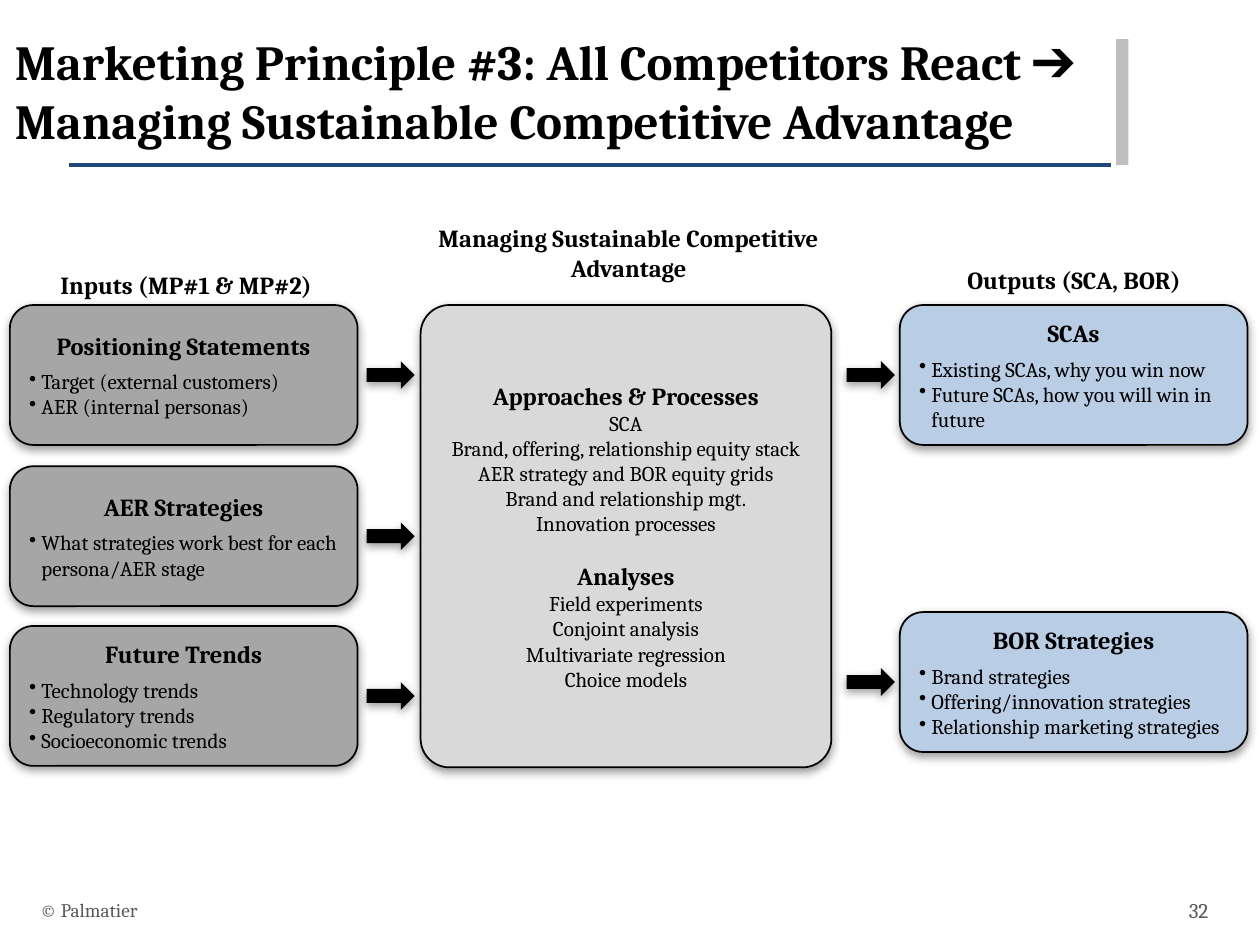
from dataclasses import dataclass
from typing import NamedTuple

from lxml.etree import SubElement
from pptx import Presentation
from pptx.dml.color import RGBColor
from pptx.enum.shapes import MSO_CONNECTOR, MSO_SHAPE
from pptx.enum.text import MSO_ANCHOR, PP_ALIGN
from pptx.oxml.ns import qn
from pptx.util import Cm, Pt


@dataclass(frozen=True)
class Theme:
    font: str = "Cambria"
    ink: str = "000000"
    muted: str = "595959"
    rule: str = "1F497D"
    bar: str = "BFBFBF"
    input_fill: str = "A6A6A6"
    process_fill: str = "D9D9D9"
    output_fill: str = "B9CDE5"
    shadow: str = "808080"
    title: float = 28
    heading: float = 14
    body: float = 12
    footer: float = 11


class Area(NamedTuple):
    """Left, top, width and height in centimetres."""
    left: float
    top: float
    width: float
    height: float

    def lengths(self):
        return [Cm(value) for value in self]


@dataclass(frozen=True)
class Card:
    title: str
    bullets: tuple[str, ...]
    left: float
    top: float
    fill: str
    arrow_left: float


@dataclass(frozen=True)
class Section:
    title: str
    lines: tuple[str, ...]
    space_before: float = 0


THEME = Theme()
CARD_WIDTH, CARD_HEIGHT = 7.01, 2.82
ARROW_WIDTH, ARROW_HEIGHT = 0.97, 0.56
ROW_TOP = 6.15
INPUT = dict(left=0.2, fill=THEME.input_fill, arrow_left=7.39)
OUTPUT = dict(left=18.14, fill=THEME.output_fill, arrow_left=17.07)

CARDS = (
    Card("Positioning Statements",
         ("Target (external customers)", "AER (internal personas)"),
         top=ROW_TOP, **INPUT),
    Card("AER Strategies",
         ("What strategies work best for each persona/AER stage",),
         top=9.4, **INPUT),
    Card("Future Trends",
         ("Technology trends", "Regulatory trends", "Socioeconomic trends"),
         top=12.62, **INPUT),
    Card("SCAs",
         ("Existing SCAs, why you win now",
          "Future SCAs, how you will win in future"),
         top=ROW_TOP, **OUTPUT),
    Card("BOR Strategies",
         ("Brand strategies", "Offering/innovation strategies",
          "Relationship marketing strategies"),
         top=12.34, **OUTPUT),
)
SECTIONS = (
    Section("Approaches & Processes",
            ("SCA", "Brand, offering, relationship equity stack",
             "AER strategy and BOR equity grids",
             "Brand and relationship mgt.", "Innovation processes")),
    Section("Analyses",
            ("Field experiments", "Conjoint analysis",
             "Multivariate regression", "Choice models"),
            space_before=14.4),
)
HEADINGS = (
    ("Managing Sustainable Competitive Advantage", Area(8.13, 4.37, 9.09, 1.45)),
    ("Inputs (MP#1 & MP#2)", Area(0.3, 5.31, 6.91, 0.86)),
    ("Outputs (SCA, BOR)", Area(18.16, 5.21, 6.99, 0.86)),
)


def add_para(frame, text: str, *, size: float = THEME.body, bold: bool = False,
             color: str = THEME.ink, align=PP_ALIGN.LEFT, before: float = 0,
             after: float = 0, bullet: bool = False):
    """Write into the empty first paragraph, or append a new one."""
    first = frame.paragraphs[0]
    para = first if not first.runs else frame.add_paragraph()
    para.alignment = align
    para.space_before, para.space_after = Pt(before), Pt(after)
    if bullet:
        properties = para._p.get_or_add_pPr()
        properties.set("marL", str(Cm(0.25)))
        properties.set("indent", str(-Cm(0.25)))
        SubElement(properties, qn("a:buChar")).set("char", "•")
    span = para.add_run()
    span.text = text
    span.font.name, span.font.size, span.font.bold = THEME.font, Pt(size), bold
    span.font.color.rgb = RGBColor.from_string(color)


def set_frame(frame, anchor):
    frame.word_wrap = True
    frame.vertical_anchor = anchor
    frame.margin_left = frame.margin_right = Cm(0.25)
    frame.margin_top = frame.margin_bottom = Cm(0.13)


def add_text(page, text: str, area: Area, *, anchor=MSO_ANCHOR.TOP, **style):
    box = page.shapes.add_textbox(*area.lengths())
    set_frame(box.text_frame, anchor)
    add_para(box.text_frame, text, **style)


def add_soft_shadow(shape):
    effects = shape._element.spPr.find(qn("a:effectLst"))
    outer = SubElement(effects, qn("a:outerShdw"), blurRad=str(Pt(5)),
                       dist=str(Pt(2)), dir="5400000", rotWithShape="0")
    color = SubElement(outer, qn("a:srgbClr"), val=THEME.shadow)
    SubElement(color, qn("a:alpha"), val="75000")


def add_block(page, kind, area: Area, fill: str, *, outlined: bool = False,
              shadow: bool = True):
    shape = page.shapes.add_shape(kind, *area.lengths())
    shape.shadow.inherit = False
    shape.fill.solid()
    shape.fill.fore_color.rgb = RGBColor.from_string(fill)
    if outlined:
        shape.line.color.rgb = RGBColor.from_string(THEME.ink)
        shape.line.width = Pt(1)
    else:
        shape.line.fill.background()
    if shadow:
        add_soft_shadow(shape)
    set_frame(shape.text_frame, MSO_ANCHOR.MIDDLE)
    return shape


def add_card(page, card: Card):
    """Draw a bulleted card and the arrow centred beside it."""
    area = Area(card.left, card.top, CARD_WIDTH, CARD_HEIGHT)
    box = add_block(page, MSO_SHAPE.ROUNDED_RECTANGLE, area, card.fill, outlined=True)
    add_para(box.text_frame, card.title, size=THEME.heading, bold=True,
             align=PP_ALIGN.CENTER, after=4.8)
    for bullet in card.bullets:
        add_para(box.text_frame, bullet, bullet=True)
    arrow_top = card.top + (CARD_HEIGHT - ARROW_HEIGHT) / 2
    add_block(page, MSO_SHAPE.RIGHT_ARROW,
              Area(card.arrow_left, arrow_top, ARROW_WIDTH, ARROW_HEIGHT), THEME.ink)


def add_process_panel(page):
    panel = add_block(page, MSO_SHAPE.ROUNDED_RECTANGLE,
                      Area(8.48, ROW_TOP, 8.28, 9.32), THEME.process_fill, outlined=True)
    panel.adjustments[0] = 0.07
    for section in SECTIONS:
        add_para(panel.text_frame, section.title, size=THEME.heading, bold=True,
                 align=PP_ALIGN.CENTER, before=section.space_before)
        for line in section.lines:
            add_para(panel.text_frame, line, align=PP_ALIGN.CENTER)


def add_frame_marks(page):
    """Draw the title, its rule and bar, and the footer."""
    rule = page.shapes.add_connector(MSO_CONNECTOR.STRAIGHT, Cm(1.4), Cm(3.33),
                                     Cm(22.4), Cm(3.33))
    rule.line.color.rgb = RGBColor.from_string(THEME.rule)
    rule.line.width = Pt(2)
    SubElement(rule._element.spPr, qn("a:effectLst"))
    add_block(page, MSO_SHAPE.RECTANGLE, Area(22.5, 0.79, 0.25, 2.54), THEME.bar,
              shadow=False)
    add_text(page, "Marketing Principle #3: All Competitors React ➔ "
             "Managing Sustainable Competitive Advantage",
             Area(0.05, 0.51, 22.56, 2.24), size=THEME.title, bold=True)
    add_text(page, "© Palmatier", Area(0.56, 17.83, 17.02, 1.02),
             anchor=MSO_ANCHOR.MIDDLE, size=THEME.footer, color=THEME.muted)
    add_text(page, "32", Area(23.06, 17.83, 1.55, 1.02), anchor=MSO_ANCHOR.MIDDLE,
             color=THEME.muted, align=PP_ALIGN.RIGHT)


def main():
    deck = Presentation()
    deck.slide_width, deck.slide_height = Cm(25.4), Cm(19.05)
    page = deck.slides.add_slide(deck.slide_layouts[6])
    add_frame_marks(page)
    for text, area in HEADINGS:
        add_text(page, text, area, size=THEME.heading, bold=True, align=PP_ALIGN.CENTER)
    add_process_panel(page)
    for card in CARDS:
        add_card(page, card)
    deck.save("out.pptx")


if __name__ == "__main__":
    main()
